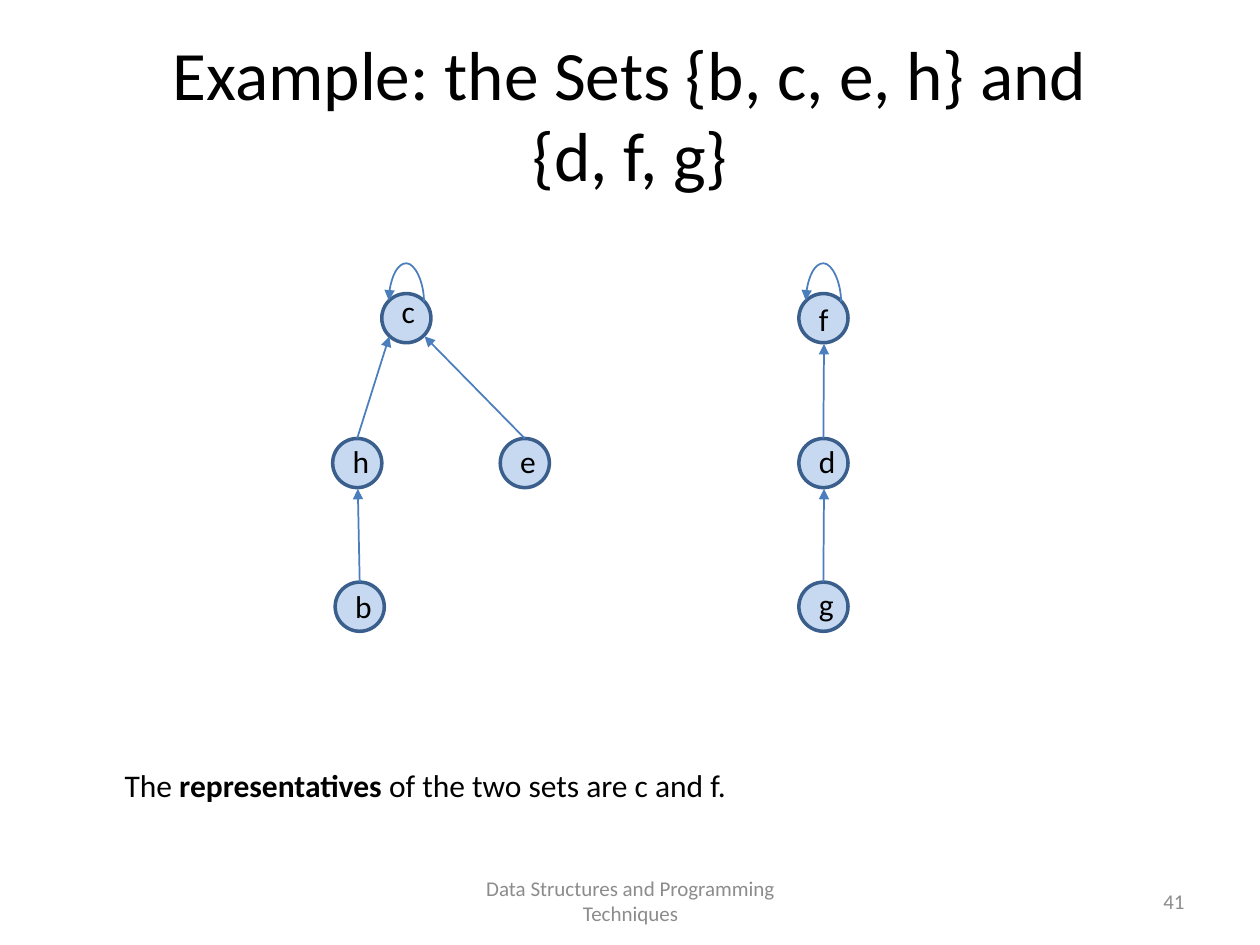
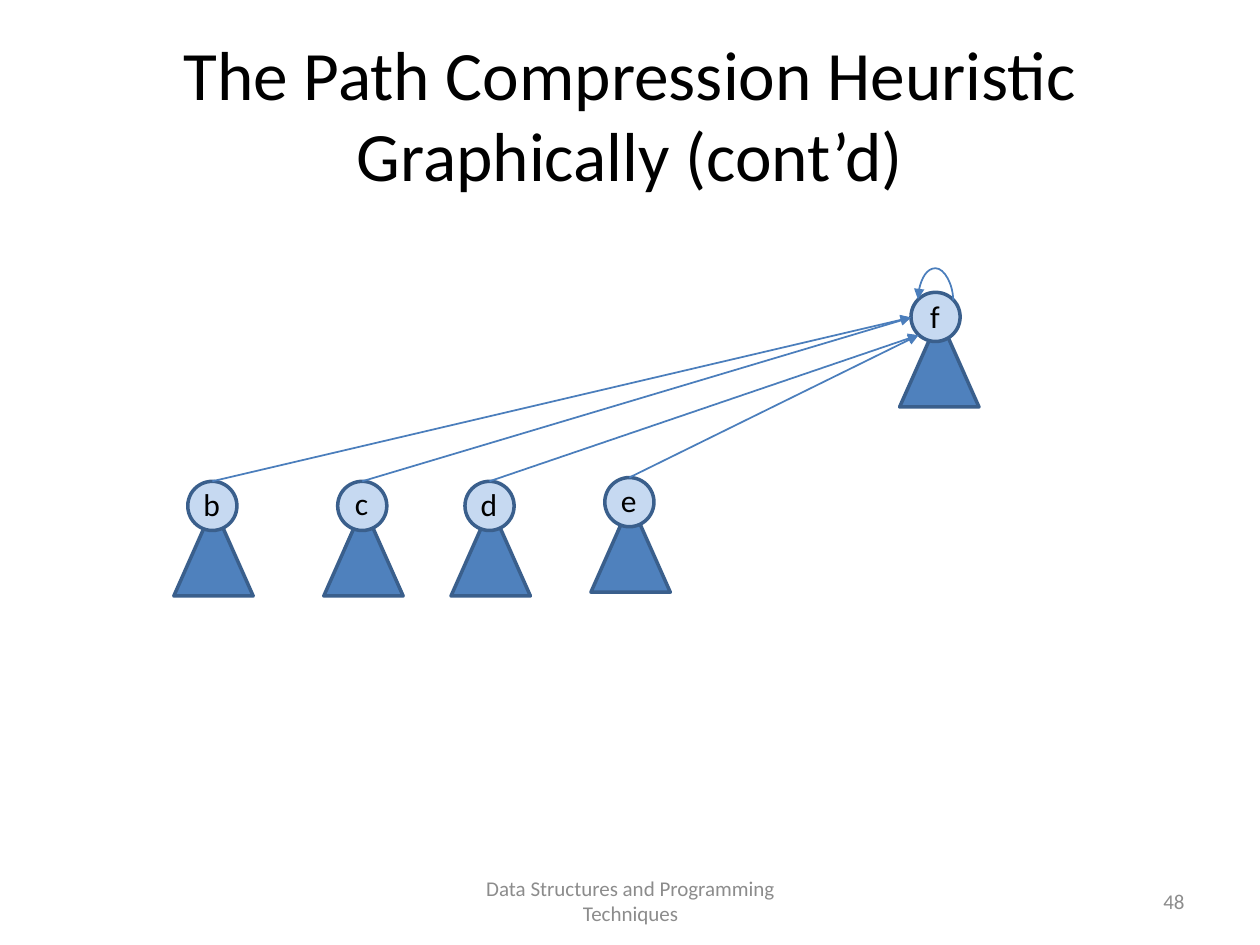
from collections import namedtuple

from lxml import etree
from pptx import Presentation
from pptx.dml.color import RGBColor
from pptx.enum.shapes import MSO_CONNECTOR, MSO_SHAPE
from pptx.enum.text import MSO_ANCHOR, MSO_AUTO_SIZE, PP_ALIGN
from pptx.oxml.ns import qn
from pptx.util import Emu, Pt

EMU_PER_PX = 9144
FONT = "Calibri"
BLACK = RGBColor(0x00, 0x00, 0x00)
GREY = RGBColor(0x8C, 0x8C, 0x8C)
PALE_BLUE = RGBColor(0xC6, 0xD9, 0xF1)
MID_BLUE = RGBColor(0x4F, 0x81, 0xBD)
OUTLINE_BLUE = RGBColor(0x3A, 0x5F, 0x8C)
ARROW_BLUE = RGBColor(0x4B, 0x7E, 0xBC)

ELLIPSE, TRIANGLE = MSO_SHAPE.OVAL, MSO_SHAPE.ISOSCELES_TRIANGLE
STRAIGHT, CURVE = MSO_CONNECTOR.STRAIGHT, MSO_CONNECTOR.CURVE
LEFT, CENTER, RIGHT = PP_ALIGN.LEFT, PP_ALIGN.CENTER, PP_ALIGN.RIGHT
TOP, MIDDLE = MSO_ANCHOR.TOP, MSO_ANCHOR.MIDDLE
NO_FIT = MSO_AUTO_SIZE.NONE

NODE_SIZE = 39
NODE_LEFT = (0, 20)
NODE_BOTTOM = (20, 40)
NODE_BOTTOM_LEFT = (6, 34)
NODE_BOTTOM_RIGHT = (34, 34)
TITLE_ONLY = 5

Box = namedtuple("Box", "left top width height")
Node = namedtuple("Node", "name left top label_rise")
Edge = namedtuple("Edge", "child parent end")

TITLE_BOX = Box(50, 30, 900, 125)
FOOTER_BOX = Box(342, 695, 317, 40)
NUMBER_BOX = Box(717, 695, 233, 40)
FOOTER = "Data Structures and Programming Techniques"


def px(length):
    """Turn px into EMU."""
    return Emu(round(length * EMU_PER_PX))


def place(shape, box):
    """Move and size a shape to a box."""
    shape.left, shape.top, shape.width, shape.height = map(px, box)


def add_span(para, text, size, color=BLACK, bold=False):
    """Add one formatted run to a paragraph."""
    span = para.add_run()
    span.text = text
    span.font.name = FONT
    span.font.size = Pt(size)
    span.font.color.rgb = color
    span.font.bold = bold


def add_text(page, box, spans, size=18, color=BLACK, align=LEFT, anchor=TOP):
    """Add a text box whose spans are pairs of text and boldness."""
    frame = page.shapes.add_textbox(*map(px, box)).text_frame
    frame.word_wrap = True
    frame.vertical_anchor = anchor
    para = frame.paragraphs[0]
    para.alignment = align
    for text, bold in spans:
        add_span(para, text, size, color, bold)


def add_page(deck, title_lines, number):
    """Add a slide with its title, footer and number."""
    page = deck.slides.add_slide(deck.slide_layouts[TITLE_ONLY])
    title = page.shapes.title
    place(title, TITLE_BOX)
    frame = title.text_frame
    frame.auto_size = NO_FIT
    frame.word_wrap = True
    frame.vertical_anchor = MIDDLE
    para = frame.paragraphs[0]
    para.alignment = CENTER
    para.line_spacing = 0.97
    for index, line in enumerate(title_lines):
        if index:
            para.add_line_break()
        add_span(para, line, 39.6)
    add_text(page, FOOTER_BOX, [(FOOTER, False)], 12, GREY, CENTER, MIDDLE)
    add_text(page, NUMBER_BOX, [(number, False)], 12, GREY, RIGHT, MIDDLE)
    return page


def add_outlined(page, kind, box, fill):
    """Add a filled preset shape with the dark outline."""
    shape = page.shapes.add_shape(kind, *map(px, box))
    shape.shadow.inherit = False
    shape.fill.solid()
    shape.fill.fore_color.rgb = fill
    shape.line.color.rgb = OUTLINE_BLUE
    shape.line.width = Pt(2)
    return shape


def add_node(page, box, node, label_width):
    """Draw a labelled circle relative to a box and return the circle."""
    left, top = box.left + node.left, box.top + node.top
    circle = add_outlined(page, ELLIPSE, Box(left, top, NODE_SIZE, NODE_SIZE), PALE_BLUE)
    label_left = left + (NODE_SIZE - label_width) // 2
    label_box = Box(label_left, top - node.label_rise, label_width, 40)
    add_text(page, label_box, [(node.name, False)], align=CENTER)
    return circle


def style_arrow(arrow):
    """Give a connector its line and arrowhead and drop its shadow."""
    arrow.line.color.rgb = ARROW_BLUE
    arrow.line.width = Pt(1)
    properties = arrow.element.spPr
    head = etree.SubElement(properties.find(qn("a:ln")), qn("a:tailEnd"))
    head.set("type", "triangle")
    etree.SubElement(properties, qn("a:effectLst"))


def add_edge(page, child, parent, end):
    """Draw an arrow from the top of a child to a point on its parent."""
    end_left, end_top = parent.left + px(end[0]), parent.top + px(end[1])
    arrow = page.shapes.add_connector(STRAIGHT, child.left, child.top, end_left, end_top)
    arrow.begin_connect(child, 0)
    style_arrow(arrow)


def add_loop(page, root, rise):
    """Draw a curved arrow from a root back to itself."""
    middle = root.left + px(19)
    level = root.top + px(6)
    reach = px(14)
    loop = page.shapes.add_connector(
        CURVE, middle, level + reach, middle + px(1), level - reach)
    properties = loop.element.spPr
    properties.find(qn("a:xfrm")).set("rot", "16200000")
    geometry = properties.find(qn("a:prstGeom"))
    values = geometry.find(qn("a:avLst"))
    if values is None:
        values = etree.SubElement(geometry, qn("a:avLst"))
    guide = etree.SubElement(values, qn("a:gd"))
    guide.set("name", "adj1")
    guide.set("fmla", f"val {rise * 100000}")
    style_arrow(loop)


def draw_tree(page, box, nodes, edges, label_width=27, loop_rise=31):
    """Draw a tree in a box, with the first node as its root."""
    circles = {node.name: add_node(page, box, node, label_width) for node in nodes}
    for edge in edges:
        add_edge(page, circles[edge.child], circles[edge.parent], edge.end)
    add_loop(page, circles[nodes[0].name], loop_rise)


def draw_subtrees(page, box, nodes):
    """Draw the triangle that hangs below each node."""
    for node in nodes:
        offset = 9 if node is nodes[0] else 11
        hanging = Box(box.left + node.left - offset, box.top + node.top + 20, 63, 71)
        add_outlined(page, TRIANGLE, hanging, MID_BLUE)


def build_sets_page(deck):
    """Build the slide with the two example sets."""
    page = add_page(deck, ["Example: the Sets {b, c, e, h} and", "{d, f, g}"], "41")
    draw_tree(
        page, Box(264, 233, 172, 268),
        [Node("c", 39, 0, 6), Node("h", 0, 115, 2),
         Node("e", 133, 115, 2), Node("b", 2, 229, 1)],
        [Edge("b", "h", NODE_BOTTOM), Edge("h", "c", NODE_BOTTOM_LEFT),
         Edge("e", "c", NODE_BOTTOM_RIGHT)])
    draw_tree(
        page, Box(634, 233, 39, 268),
        [Node("f", 0, 0, 0), Node("d", 0, 115, 2), Node("g", 0, 229, 3)],
        [Edge("d", "f", NODE_BOTTOM), Edge("g", "d", NODE_BOTTOM)])
    add_text(page, Box(89, 603, 726, 40), [
        ("The ", False), ("representatives", True),
        (" of the two sets are c and f.", False)])


def build_compression_page(deck):
    """Build the slide with the compressed path."""
    page = add_page(deck, ["The Path Compression Heuristic Graphically (cont’d)"], "48")
    box = Box(138, 232, 639, 241)
    nodes = [Node("f", 585, 0, 1), Node("e", 342, 147, 2), Node("d", 231, 150, 2),
             Node("c", 130, 150, 3), Node("b", 11, 150, 2)]
    ends = {"e": NODE_BOTTOM_LEFT, "d": NODE_BOTTOM_LEFT, "c": NODE_LEFT, "b": NODE_LEFT}
    draw_subtrees(page, box, nodes)
    draw_tree(page, box, nodes, [Edge(name, "f", end) for name, end in ends.items()],
              label_width=34, loop_rise=26)


def main():
    """Build and save the deck."""
    deck = Presentation()
    deck.slide_width, deck.slide_height = px(1000), px(750)
    build_sets_page(deck)
    build_compression_page(deck)
    deck.save("out.pptx")


if __name__ == "__main__":
    main()
